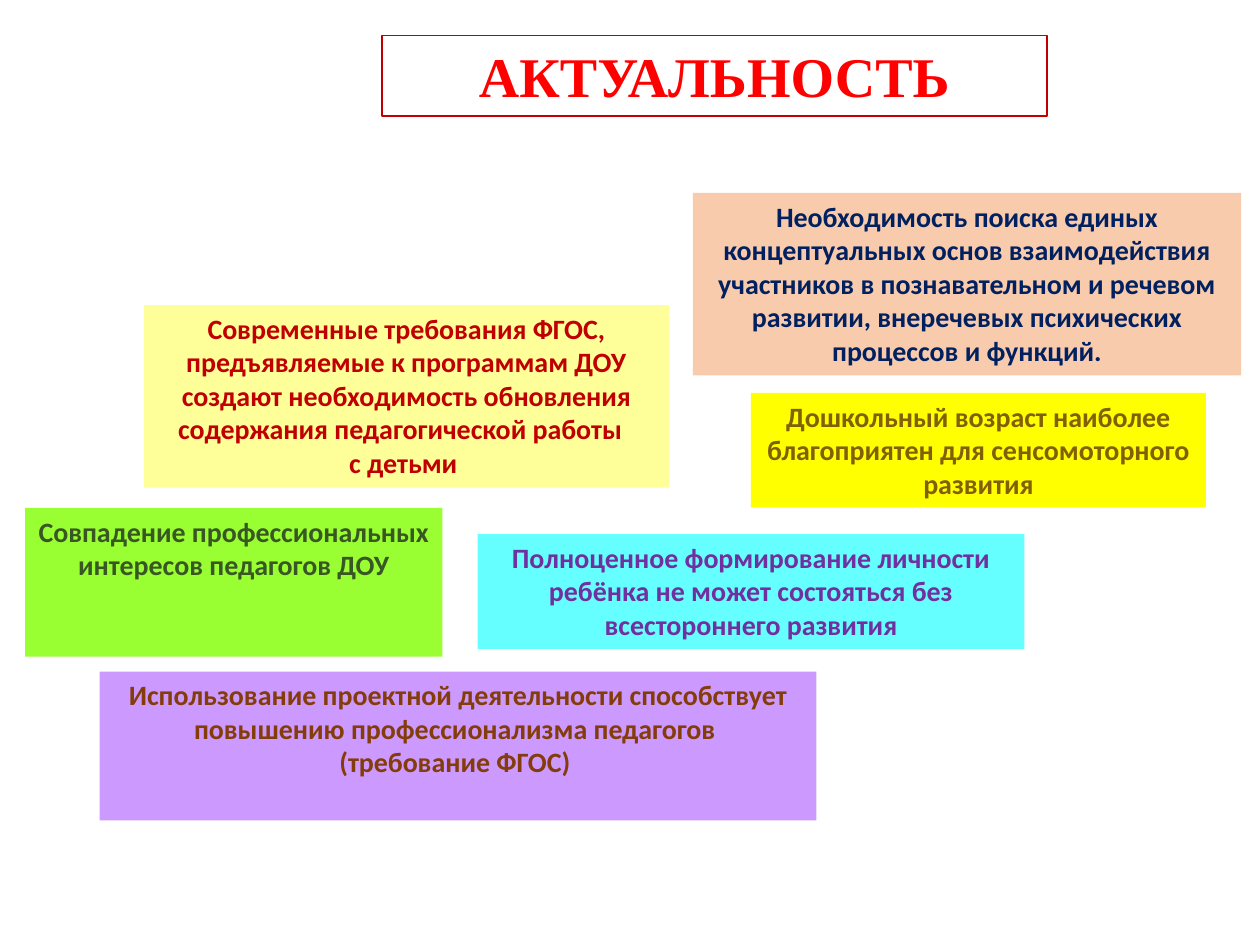
import pptx
import pptx.dml.color
import pptx.enum.text
import pptx.util
from pptx.util import Cm

TWO_LINES, THREE_LINES, FIVE_LINES = 3.0, 2.31, 3.68  # two-line cards keep spare room below

# left, top, width, height in cm; fill; text colour; paragraphs
REASONS = [
    ((2.9, 6.15, 10.59, FIVE_LINES), "FFFF99", "C00000",
     ["Современные требования ФГОС, предъявляемые к программам ДОУ создают "
      "необходимость обновления содержания\u00a0педагогической работы  ", "с детьми "]),
    ((9.63, 10.77, 11.02, THREE_LINES), "66FFFF", "7030A0",
     ["Полноценное формирование личности ребёнка не может состояться без "
      "всестороннего развития"]),
    ((13.97, 3.89, 11.05, FIVE_LINES), "F8CBAD", "002060",
     ["Необходимость поиска единых концептуальных основ взаимодействия участников "
      "в познавательном и речевом развитии, внеречевых психических процессов и функций."]),
    ((15.14, 7.92, 9.17, THREE_LINES), "FFFF00", "806000",
     ["Дошкольный возраст наиболее благоприятен для сенсомоторного развития"]),
    ((0.51, 10.24, 8.41, TWO_LINES), "99FF33", "385723",
     ["Совпадение профессиональных интересов педагогов ДОУ"]),
    ((2.01, 13.54, 14.45, TWO_LINES), "CC99FF", "843C0B",
     ["Использование проектной деятельности способствует повышению "
      "профессионализма педагогов ", "(требование ФГОС) "]),
]


def color(value):
    return pptx.dml.color.RGBColor.from_string(value)


def add_card(slide, box, fill, text_color, paragraphs, font="Calibri", size=16):
    """Place a filled box of bold centred text and return it."""
    shape = slide.shapes.add_textbox(*(Cm(length) for length in box))
    shape.fill.solid()
    shape.fill.fore_color.rgb = color(fill)
    frame = shape.text_frame
    frame.word_wrap = True
    frame.auto_size = pptx.enum.text.MSO_AUTO_SIZE.NONE
    for index, text in enumerate(paragraphs):
        paragraph = frame.add_paragraph() if index else frame.paragraphs[0]
        paragraph.alignment = pptx.enum.text.PP_ALIGN.CENTER
        run = paragraph.add_run()
        run.text = text
        run.font.name = font
        run.font.size = pptx.util.Pt(size)
        run.font.bold = True
        run.font.color.rgb = color(text_color)
    return shape


def add_title(slide, box, text):
    shape = add_card(slide, box, "FFFFFF", "FF0000", [text], "Times New Roman", 32)
    shape.line.color.rgb = color("C00000")
    shape.line.width = pptx.util.Pt(0.75)


def main():
    presentation = pptx.Presentation()
    presentation.slide_width = Cm(25.4)
    presentation.slide_height = Cm(19.05)
    slide = presentation.slides.add_slide(presentation.slide_layouts[6])
    add_title(slide, (7.7, 0.71, 13.41, 1.63), "АКТУАЛЬНОСТЬ")
    for reason in REASONS:
        add_card(slide, *reason)
    presentation.save("out.pptx")


if __name__ == "__main__":
    main()
